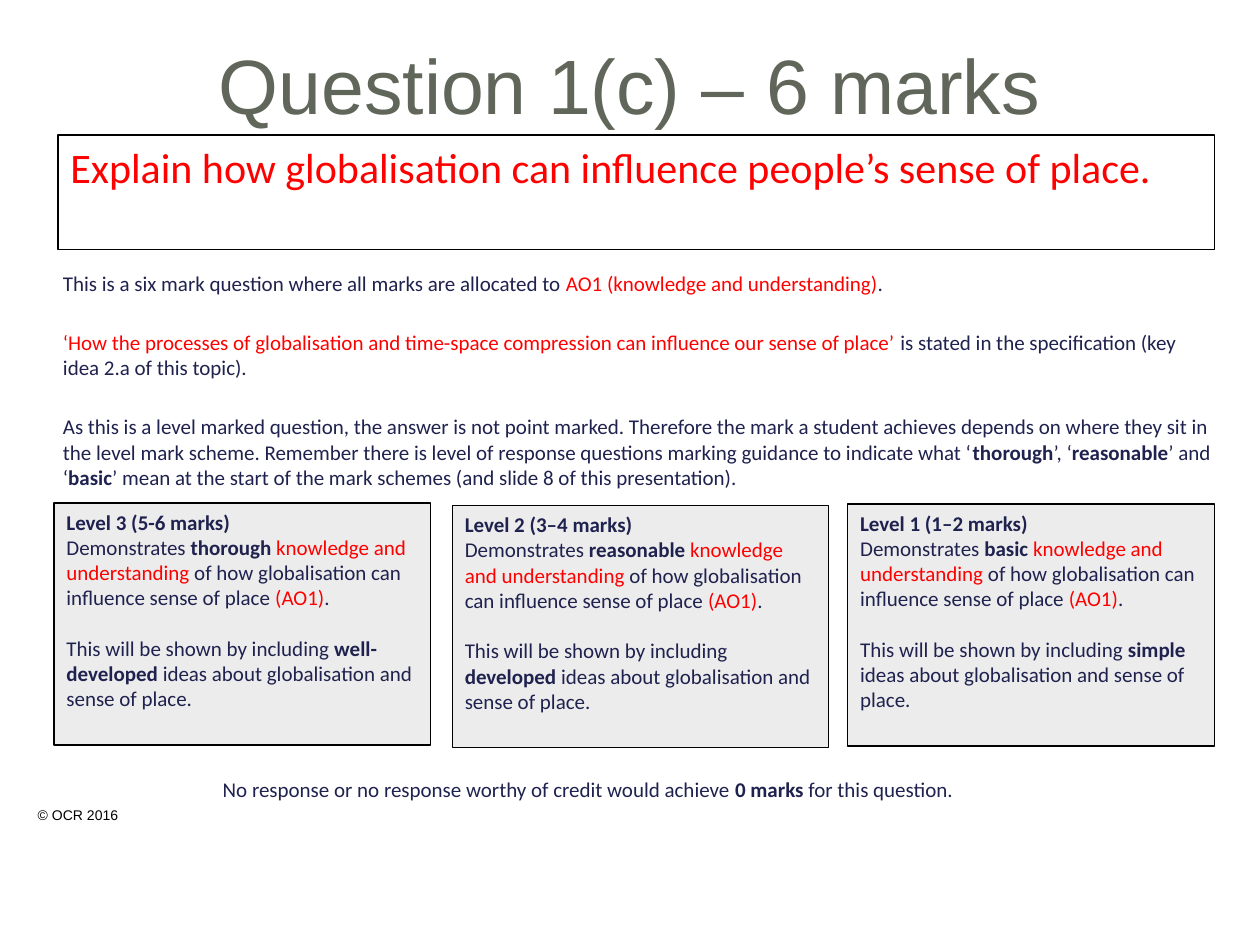
"""Build the slide on the six mark question 1(c) and its mark levels."""
from pptx import Presentation
from pptx.dml.color import RGBColor
from pptx.enum.shapes import MSO_SHAPE as Preset
from pptx.enum.text import MSO_ANCHOR as Anchor, PP_ALIGN as Align
from pptx.util import Cm, Pt

NAVY, RED, BLACK, GREY, OLIVE = "1F224E", "FF0000", "000000", "ECECEC", "60665A"
PLAIN = {"name": "Calibri", "size": Pt(12), "bold": False, "color": NAVY}
STYLES = {
    "plain": PLAIN,
    "bold": {**PLAIN, "bold": True},
    "red": {**PLAIN, "color": RED},
    "question": {**PLAIN, "size": Pt(24), "color": RED},
    "title": {**PLAIN, "name": "Arial", "size": Pt(44), "color": OLIVE},
    "copyright": {**PLAIN, "name": "Arial", "size": Pt(8), "color": BLACK},
}

TITLE = [[("Question 1(c) – 6 marks", "title")]]
QUESTION = [[("Explain how globalisation can influence people’s sense of place.", "question")]]
GUIDANCE = [
    [("This is a six mark question where all marks are allocated to ", "plain"),
     ("AO1 (knowledge and understanding)", "red"), (".", "plain")],
    [("‘How the processes of globalisation and time-space compression can influence "
      "our sense of place’", "red"),
     (" is stated in the specification (key idea 2.a of this topic).", "plain")],
    [("As this is a level marked question, the answer is not point marked. Therefore the "
      "mark a student achieves depends on where they sit in the level mark scheme. Remember "
      "there is level of response questions marking guidance to indicate what ‘", "plain"),
     ("thorough", "bold"), ("’, ‘", "plain"), ("reasonable", "bold"),
     ("’ and ‘", "plain"), ("basic", "bold"),
     ("’ mean at the start of the mark schemes (and slide 8 of this presentation).", "plain")],
]
LEVELS = [
    ("Level 3 (5-6 marks)", "thorough ", "well-developed ", (1.09, 10.14, 7.59, 4.88)),
    ("Level 2 (3–4 marks)", "reasonable ", "developed ", (9.12, 10.19, 7.59, 4.88)),
    ("Level 1 (1–2 marks)", "basic ", "simple ", (17.09, 10.16, 7.39, 4.88)),
]
NO_CREDIT = [[("No response or no response worthy of credit would achieve ", "plain"),
              ("0 marks ", "bold"), ("for this question.", "plain")]]
COPYRIGHT = [[("© OCR 2016", "copyright")]]


def rgb(value):
    """Turn a hex string into a colour."""
    return RGBColor.from_string(value)


def level_text(heading, quality, development):
    """Return the paragraphs and the space before each for one level."""
    return [
        [(heading, "bold")],
        [("Demonstrates ", "plain"), (quality, "bold"),
         ("knowledge and understanding", "red"),
         (" of how globalisation can influence sense of place ", "plain"),
         ("(AO1)", "red"), (".", "plain")],
        [("This will be shown by including ", "plain"), (development, "bold"),
         ("ideas about globalisation and sense of place.", "plain")],
    ]


def write(shape, paragraphs, gaps=(), align=Align.LEFT, anchor=Anchor.TOP):
    """Fill a shape with styled runs, with gaps in points before later paragraphs."""
    frame = shape.text_frame
    frame.word_wrap = True
    frame.vertical_anchor = anchor
    for index, runs in enumerate(paragraphs):
        paragraph = frame.add_paragraph() if index else frame.paragraphs[0]
        paragraph.alignment = align
        if index:
            paragraph.space_before = Pt(gaps[index - 1])
        for text, style in runs:
            run = paragraph.add_run()
            run.text = text
            for name, value in STYLES[style].items():
                if name == "color":
                    run.font.color.rgb = rgb(value)
                else:
                    setattr(run.font, name, value)


def add_text(slide, place, paragraphs, **layout):
    """Add a plain text box."""
    write(slide.shapes.add_textbox(*map(Cm, place)), paragraphs, **layout)


def add_panel(slide, place, paragraphs, fill=None, **layout):
    """Add an outlined rectangle with text."""
    shape = slide.shapes.add_shape(Preset.RECTANGLE, *map(Cm, place))
    shape.shadow.inherit = False
    if fill:
        shape.fill.solid()
        shape.fill.fore_color.rgb = rgb(fill)
    else:
        shape.fill.background()
    shape.line.color.rgb = rgb(BLACK)
    shape.line.width = Pt(0.75)
    write(shape, paragraphs, **layout)


def main():
    """Create and save the presentation."""
    presentation = Presentation()
    presentation.slide_width, presentation.slide_height = Cm(25.4), Cm(19.05)
    slide = presentation.slides.add_slide(presentation.slide_layouts[6])
    add_text(slide, (0.51, 16.13, 4.8, 0.61), COPYRIGHT)
    add_text(slide, (1.27, 0.1, 22.86, 3.18), TITLE, align=Align.CENTER, anchor=Anchor.MIDDLE)
    add_panel(slide, (1.17, 2.72, 23.32, 2.31), QUESTION)
    add_text(slide, (1.02, 5.33, 23.77, 2.79), GUIDANCE, gaps=(19.4, 19.4))
    for heading, quality, development, place in LEVELS:
        add_panel(slide, place, level_text(heading, quality, development), GREY, gaps=(0, 14.5))
    add_text(slide, (4.24, 15.52, 16.61, 0.76), NO_CREDIT)
    presentation.save("out.pptx")


if __name__ == "__main__":
    main()
